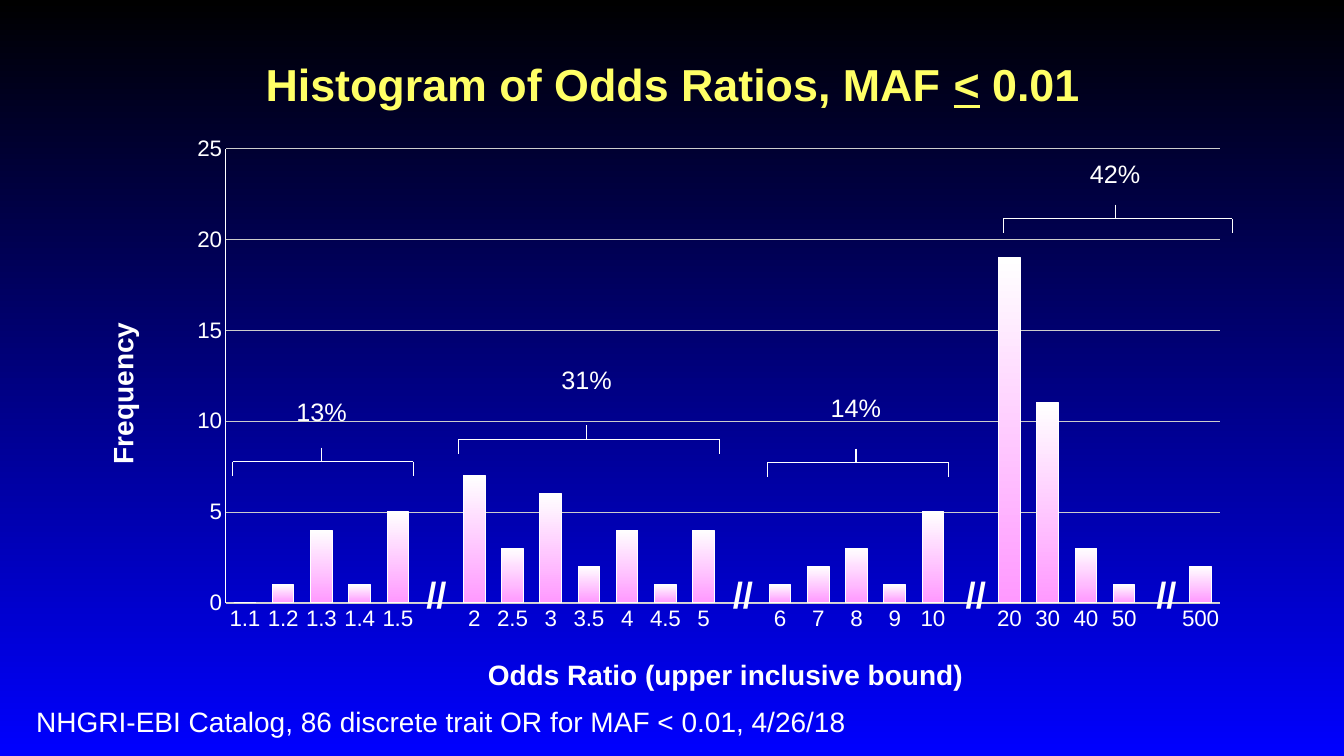
"""Build a slide with a histogram of odds ratios for rare variants."""
from lxml import etree
from pptx import Presentation
from pptx import util as u
from pptx.chart import data
from pptx.dml import color
from pptx.enum import chart as charts, dml, shapes, text
from pptx.oxml import ns

WHITE = "FFFFFF"


def rgb(value):
    return color.RGBColor.from_string(value)


def set_font(font, size, hue=WHITE, bold=False, underline=False):
    font.name = "Arial"
    font.size = u.Pt(size)
    font.bold = bold
    font.underline = underline
    font.color.rgb = rgb(hue)


def write(paragraph, words, **style):
    run = paragraph.add_run()
    run.text = words
    set_font(run.font, **style)


def set_line(line, hue, width):
    line.color.rgb = rgb(hue)
    line.width = u.Pt(width)


def set_gradient(fill, top, bottom):
    fill.gradient()
    fill.gradient_angle = 270
    for stop, hue in zip(fill.gradient_stops, (top, bottom)):
        stop.color.rgb = rgb(hue)


class HistogramSlide:
    def __init__(self, presentation):
        self.slide = presentation.slides.add_slide(presentation.slide_layouts[5])
        set_gradient(self.slide.background.fill, "000000", "0000FF")

    def title(self, parts, left, top, width, height):
        shape = self.slide.shapes.title
        shape.left, shape.top = u.Inches(left), u.Inches(top)
        shape.width, shape.height = u.Inches(width), u.Inches(height)
        frame = shape.text_frame
        frame.auto_size = text.MSO_AUTO_SIZE.NONE
        frame.vertical_anchor = text.MSO_ANCHOR.MIDDLE
        paragraph = frame.paragraphs[0]
        paragraph.alignment = text.PP_ALIGN.CENTER
        paragraph.line_spacing = 0.95
        for words, underline in parts:
            write(paragraph, words, size=32, hue="FFFF66", bold=True, underline=underline)

    def label(self, words, left, top, width, height, rotation=0, **style):
        shape = self.slide.shapes.add_textbox(
            u.Inches(left), u.Inches(top), u.Inches(width), u.Inches(height))
        shape.rotation = rotation
        shape.text_frame.word_wrap = False
        shape.text_frame.auto_size = text.MSO_AUTO_SIZE.SHAPE_TO_FIT_TEXT
        write(shape.text_frame.paragraphs[0], words, **style)

    def line(self, x1, y1, x2, y2):
        connector = self.slide.shapes.add_connector(
            shapes.MSO_CONNECTOR.STRAIGHT,
            u.Inches(x1), u.Inches(y1), u.Inches(x2), u.Inches(y2))
        set_line(connector.line, WHITE, 0.75)
        etree.SubElement(connector._element.spPr, ns.qn("a:effectLst"))

    def bracket(self, share, left, right, stem, y, label_top, tick=0.14):
        self.line(left, y, right, y)
        for end in (left, right):
            self.line(end, y, end, y + tick)
        self.line(stem, y - tick, stem, y)
        self.label(share, stem - 0.35, label_top, 0.71, 0.4, size=18)

    def histogram(self, categories, values, left, top, width, height):
        chart_data = data.CategoryChartData()
        chart_data.categories = categories
        chart_data.add_series("Series 1", values)
        chart = self.slide.shapes.add_chart(
            charts.XL_CHART_TYPE.COLUMN_CLUSTERED, u.Inches(left), u.Inches(top),
            u.Inches(width), u.Inches(height), chart_data).chart
        chart.has_legend = chart.has_title = False
        set_font(chart.font, 16)
        plot = chart.plots[0]
        plot.gap_width, plot.overlap = 77, -27
        plot.vary_by_categories = False
        series = plot.series[0]
        series.invert_if_negative = False
        set_gradient(series.format.fill, WHITE, "FF99FF")
        set_line(series.format.line, WHITE, 0.75)
        for axis, hue in ((chart.category_axis, "D9D9D9"), (chart.value_axis, WHITE)):
            axis.major_tick_mark = axis.minor_tick_mark = charts.XL_TICK_MARK.NONE
            set_font(axis.tick_labels.font, 16)
            set_line(axis.format.line, hue, 0.75)
        axis = chart.value_axis
        axis.minimum_scale, axis.maximum_scale, axis.major_unit = 0, 25, 5
        axis.has_major_gridlines = True
        grid = axis.major_gridlines.format.line
        set_line(grid, "CCCCCC", 0.25)
        grid.dash_style = dml.MSO_LINE.ROUND_DOT
        self.place_plot(chart, x=0.05, y=0.04, w=0.93, h=0.88)

    def place_plot(self, chart, **box):
        area = chart._chartSpace.chart.plotArea
        for old in area.findall(ns.qn("c:layout")):
            area.remove(old)
        layout = etree.Element(ns.qn("c:layout"))
        area.insert(0, layout)
        manual = etree.SubElement(layout, ns.qn("c:manualLayout"))
        settings = {"layoutTarget": "inner", "xMode": "edge", "yMode": "edge", **box}
        for name, value in settings.items():
            etree.SubElement(manual, ns.qn(f"c:{name}")).set("val", str(value))


def main():
    presentation = Presentation()
    presentation.slide_width = u.Inches(13.33)
    presentation.slide_height = u.Inches(7.5)
    page = HistogramSlide(presentation)
    page.title([("Histogram of Odds Ratios, MAF ", False), ("<", True), (" 0.01", False)],
               1.55, 0.4, 10.24, 0.91)

    bounds = ["1.1", "1.2", "1.3", "1.4", "1.5", "",
              "2", "2.5", "3", "3.5", "4", "4.5", "5", "",
              "6", "7", "8", "9", "10", "", "20", "30", "40", "50", "", "500"]
    counts = [0, 1, 4, 1, 5, None, 7, 3, 6, 2, 4, 1, 4, None,
              1, 2, 3, 1, 5, None, 19, 11, 3, 1, None, 2]
    page.histogram(bounds, counts, 1.71, 1.27, 10.6, 5.12)

    page.label("Frequency", 0.36, 3.62, 1.72, 0.45, rotation=270, size=20, bold=True)
    page.label("Odds Ratio (upper inclusive bound)", 4.74, 6.47, 5.13, 0.46,
               size=20, bold=True)
    for left in (4.13, 7.17, 9.48, 11.37):
        page.label("//", left, 5.63, 0.42, 0.57, size=26, bold=True)
    page.label("NHGRI-EBI Catalog, 86 discrete trait OR for MAF < 0.01, 4/26/18",
               0.26, 6.94, 8.29, 0.44, size=20)

    for bracket in (("13%", 2.31, 4.1, 3.19, 4.58, 3.88),
                    ("31%", 4.55, 7.14, 5.82, 4.36, 3.57),
                    ("14%", 7.61, 9.41, 8.49, 4.59, 3.84),
                    ("42%", 9.95, 12.22, 11.06, 2.17, 1.52)):
        page.bracket(*bracket)
    presentation.save("out.pptx")


if __name__ == "__main__":
    main()
